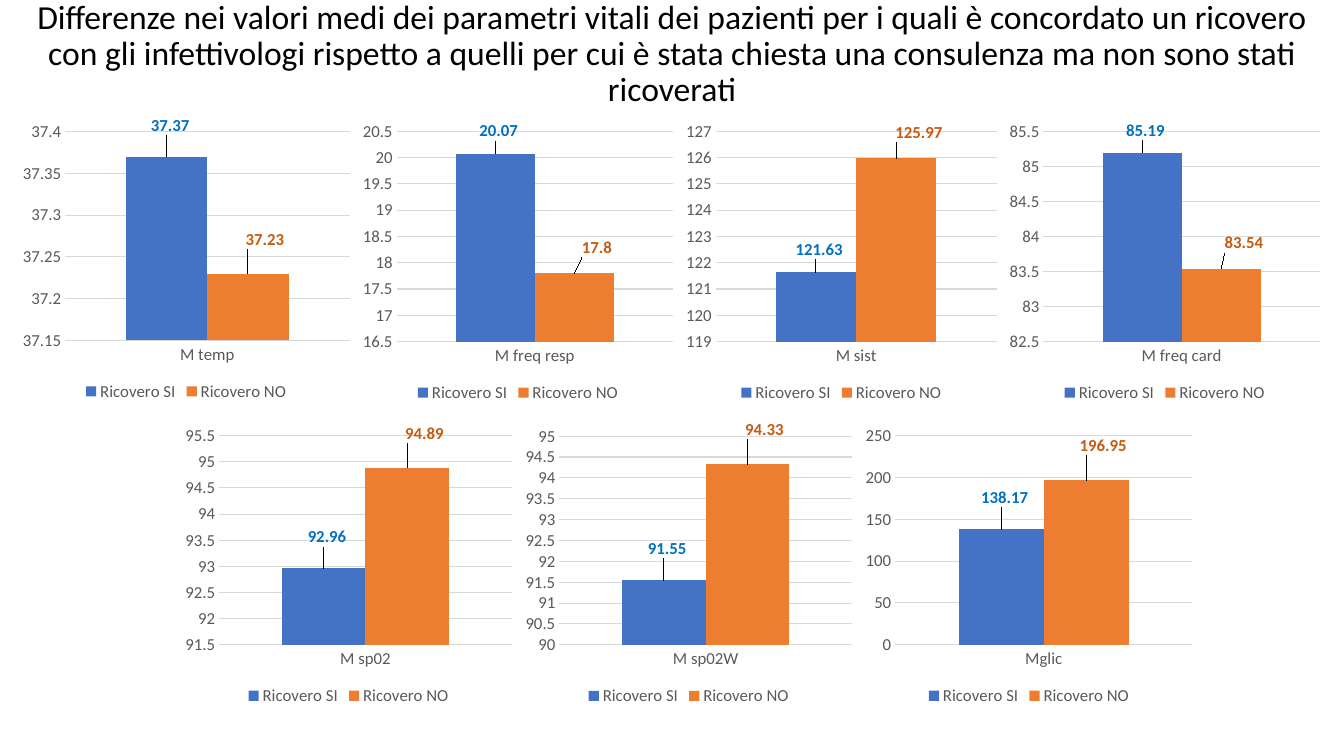
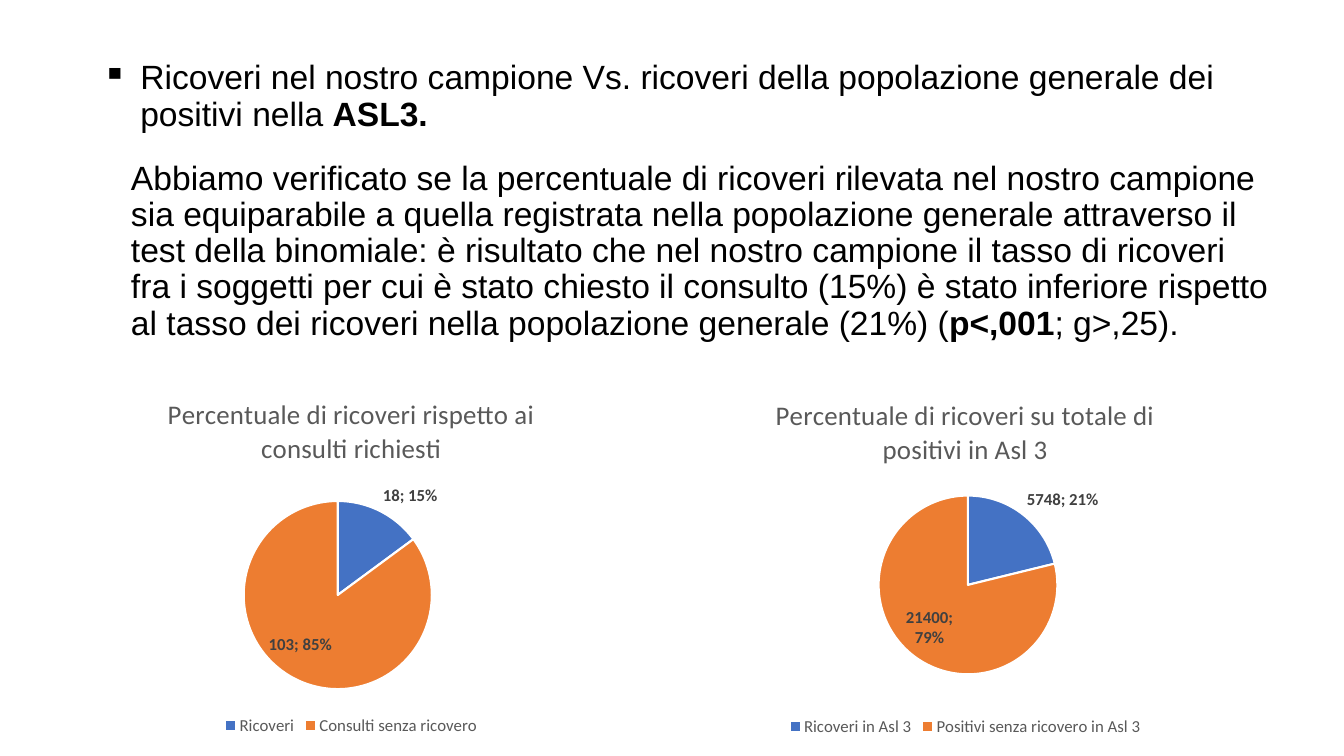
"""Builds two slides comparing hospital admissions."""
from copy import deepcopy

from lxml import etree
from pptx import Presentation
from pptx.chart.data import CategoryChartData
from pptx.dml.color import RGBColor
from pptx.enum import chart as charts, text
from pptx.oxml import parse_xml
from pptx.oxml.ns import nsdecls, qn
from pptx.util import Pt

BLUE, ORANGE, GREY = "4472C4", "ED7D31", "595959"
LABEL_POSITION = charts.XL_LABEL_POSITION


def color(value):
    """Turn a hex string into a colour."""
    return RGBColor.from_string(value)


def manual_layout(inner=False, **values):
    """Make a chart layout element from fractions of the chart size."""
    target = '<c:layoutTarget val="inner"/>' if inner else ""
    modes = '<c:xMode val="edge"/><c:yMode val="edge"/>' if inner else ""
    places = "".join(f'<c:{key} val="{value}"/>' for key, value in values.items())
    return parse_xml(f'<c:layout {nsdecls("c")}><c:manualLayout>{target}{modes}'
                     f'{places}</c:manualLayout></c:layout>')


class Deck:
    """Holds the style, the presentation and the current slide."""

    def __init__(self):
        """Start a wide presentation."""
        self.deck = Presentation()
        self.deck.slide_width, self.deck.slide_height = Pt(960), Pt(540)
        self.page = None

    def add_page(self):
        """Start a slide with a title."""
        self.page = self.deck.slides.add_slide(self.deck.slide_layouts[5])

    def style(self, font, size=12, ink=GREY, bold=False, name="Calibri"):
        """Format a font."""
        font.name, font.size, font.bold = name, Pt(size), bold
        font.color.rgb = color(ink)

    def fill_box(self, box, place, spans, name, align=text.PP_ALIGN.LEFT):
        """Place a text shape and fill it with (words, bold) spans."""
        box.left, box.top, box.width, box.height = map(Pt, place)
        frame = box.text_frame
        frame.word_wrap, frame.auto_size = True, text.MSO_AUTO_SIZE.NONE
        frame.vertical_anchor = text.MSO_ANCHOR.TOP
        frame.margin_left = frame.margin_right = Pt(7.2)
        frame.margin_top = frame.margin_bottom = 0
        para = frame.paragraphs[0]
        para.alignment, para.line_spacing, para.space_before = align, 0.9, Pt(0)
        for words, bold in spans:
            span = para.add_run()
            span.text = words
            self.style(span.font, 24, "000000", bold, name)
        return para

    def title(self, place, spans, name="Arial", align=text.PP_ALIGN.LEFT):
        """Fill the title placeholder."""
        return self.fill_box(self.page.shapes.title, place, spans, name, align)

    def body(self, place, spans):
        """Add a body paragraph."""
        box = self.page.shapes.add_textbox(*map(Pt, place))
        self.fill_box(box, place, spans, "Arial")

    def bullet(self, para, indent):
        """Give a paragraph a square bullet with a hanging indent."""
        props = para._p.get_or_add_pPr()
        props.set("marL", str(Pt(indent)))
        props.set("indent", str(-Pt(indent)))
        etree.SubElement(props, qn("a:buChar")).set("char", "▪")

    def chart(self, kind, place, categories, series):
        """Add a chart with a legend below it."""
        data = CategoryChartData()
        data.categories = categories
        for name, values in series:
            data.add_series(name, values)
        chart = self.page.shapes.add_chart(kind, *map(Pt, place), data).chart
        chart.has_title = False
        self.style(chart.font, 10, "000000")
        chart.has_legend = True
        chart.legend.position = charts.XL_LEGEND_POSITION.BOTTOM
        chart.legend.include_in_layout = False
        self.style(chart.legend.font)
        return chart

    def labels(self, series, ink, points, percent=False):
        """Label a series, each point with a (position, dx, dy) placement."""
        labels = series.data_labels
        labels.show_value, labels.show_percentage = True, percent
        self.style(labels.font, 12, ink, True)
        root = labels._element
        separator = parse_xml(f'<c:separator {nsdecls("c")}>; </c:separator>')
        root.find(qn("c:showBubbleSize")).addnext(separator)
        built = []
        for index, (position, dx, dy) in enumerate(points):
            labels.position = position
            label = etree.Element(qn("c:dLbl"))
            etree.SubElement(label, qn("c:idx")).set("val", str(index))
            label.append(manual_layout(x=dx, y=dy))
            label.extend(deepcopy(child) for child in root
                         if child.tag != qn("c:showLeaderLines"))
            built.append(label)
        for index, label in enumerate(built):
            root.insert(index, label)

    def columns(self, place, category, values, scale, offsets):
        """Add a chart that compares two columns."""
        names = "Ricovero SI", "Ricovero NO"
        chart = self.chart(charts.XL_CHART_TYPE.COLUMN_CLUSTERED, place, [category],
                           [(name, [value]) for name, value in zip(names, values)])
        for axis in (chart.category_axis, chart.value_axis):
            axis.major_tick_mark = axis.minor_tick_mark = charts.XL_TICK_MARK.NONE
            axis.format.line.fill.background()
            self.style(axis.tick_labels.font)
        axis.minimum_scale, axis.maximum_scale, axis.major_unit = scale
        grid = axis.major_gridlines.format.line
        grid.width, grid.color.rgb = Pt(0.75), color("D9D9D9")
        plot = chart.plots[0]
        plot.gap_width, plot.overlap, plot.vary_by_categories = 150, 0, False
        inks = (BLUE, "0070C0"), (ORANGE, "C55A11")
        for series, (fill, ink), offset in zip(plot.series, inks, offsets):
            series.format.fill.solid()
            series.format.fill.fore_color.rgb = color(fill)
            self.labels(series, ink, [(LABEL_POSITION.OUTSIDE_END, *offset)])

    def pie(self, place, title, slices, circle, shift):
        """Add a titled pie with two slices."""
        chart = self.chart(charts.XL_CHART_TYPE.PIE, place, list(slices),
                           [("Series 1", list(slices.values()))])
        chart.has_title = True
        frame = chart.chart_title.text_frame
        frame.text = title
        self.style(frame.paragraphs[0].runs[0].font, 19.2)
        area = chart._chartSpace.chart.plotArea
        for old in area.findall(qn("c:layout")):
            area.remove(old)
        area.insert(0, manual_layout(True, **dict(zip("xywh", circle))))
        series = chart.plots[0].series[0]
        for index, fill in enumerate((BLUE, ORANGE)):
            part = series.points[index].format
            part.fill.solid()
            part.fill.fore_color.rgb = color(fill)
            part.line.width, part.line.color.rgb = Pt(1.5), color("FFFFFF")
        self.labels(series, "404040", [(LABEL_POSITION.OUTSIDE_END, 0, 0),
                                       (LABEL_POSITION.CENTER, *shift)], True)


def vital_signs(deck):
    """Build the slide of mean vital signs."""
    deck.add_page()
    deck.title((0, 0, 960, 104), [(
        "Differenze nei valori medi dei parametri vitali dei pazienti per i quali è "
        "concordato un ricovero con gli infettivologi rispetto a quelli per cui è stata "
        "chiesta una consulenza ma non sono stati ricoverati", False)],
        "Calibri", text.PP_ALIGN.CENTER)
    wide = 243, 207, ((0.01, -0.06), (0.05, -0.07))
    narrow = 231, 208, ((0.01, -0.03), (0.07, -0.04))
    rows = [
        (11.5, 82.5, [
            (wide, "M temp", (37.37, 37.23), (37.15, 37.4, 0.05)),
            (narrow, "M freq resp", (20.07, 17.8), (16.5, 20.5, 0.5)),
            (narrow, "M sist", (121.63, 125.97), (119, 127, 1)),
            (narrow, "M freq card", (85.19, 83.54), (82.5, 85.5, 0.5))]),
        (127.5, 300, [
            (wide, "M sp02", (92.96, 94.89), (91.5, 95.5, 0.5)),
            (wide, "M sp02W", (91.55, 94.33), (90, 95, 0.5)),
            (wide, "Mglic", (138.17, 196.95), (0, 250, 50))]),
    ]
    for left, top, row in rows:
        for (width, height, offsets), category, values, scale in row:
            deck.columns((left, top, width, height), category, values, scale, offsets)
            left += width


def admissions(deck):
    """Build the slide of admission rates."""
    deck.add_page()
    para = deck.title((66, 43.5, 828, 60), [
        ("Ricoveri nel nostro campione Vs. ricoveri della popolazione generale dei "
         "positivi nella ", False), ("ASL3.", True)])
    deck.bullet(para, 27)
    deck.body((86.5, 115, 828, 140), [
        ("Abbiamo verificato se la percentuale di ricoveri rilevata nel nostro campione "
         "sia equiparabile a quella registrata nella popolazione generale attraverso il "
         "test della binomiale: è risultato che nel nostro campione il tasso di ricoveri "
         "fra i soggetti per cui è stato chiesto il consulto (15%) è stato inferiore "
         "rispetto al tasso dei ricoveri nella popolazione generale (21%) (", False),
        ("p<,001", True), ("; g>,25).", False)])
    deck.pie((57.5, 270, 387, 258.5), "Percentuale di ricoveri rispetto ai consulti richiesti",
             {"Ricoveri": 18, "Consulti senza ricovero": 103},
             (0.3, 0.34, 0.35, 0.52), (-0.03, 0.02))
    deck.pie((496, 270.5, 387, 258.5), "Percentuale di ricoveri su totale di positivi in Asl 3",
             {"Ricoveri in Asl 3": 5748, "Positivi senza ricovero in Asl 3": 21400},
             (0.34, 0.32, 0.33, 0.5), (-0.02, 0.02))


def main():
    """Build and save the presentation."""
    deck = Deck()
    vital_signs(deck)
    admissions(deck)
    deck.deck.save("out.pptx")


if __name__ == "__main__":
    main()
